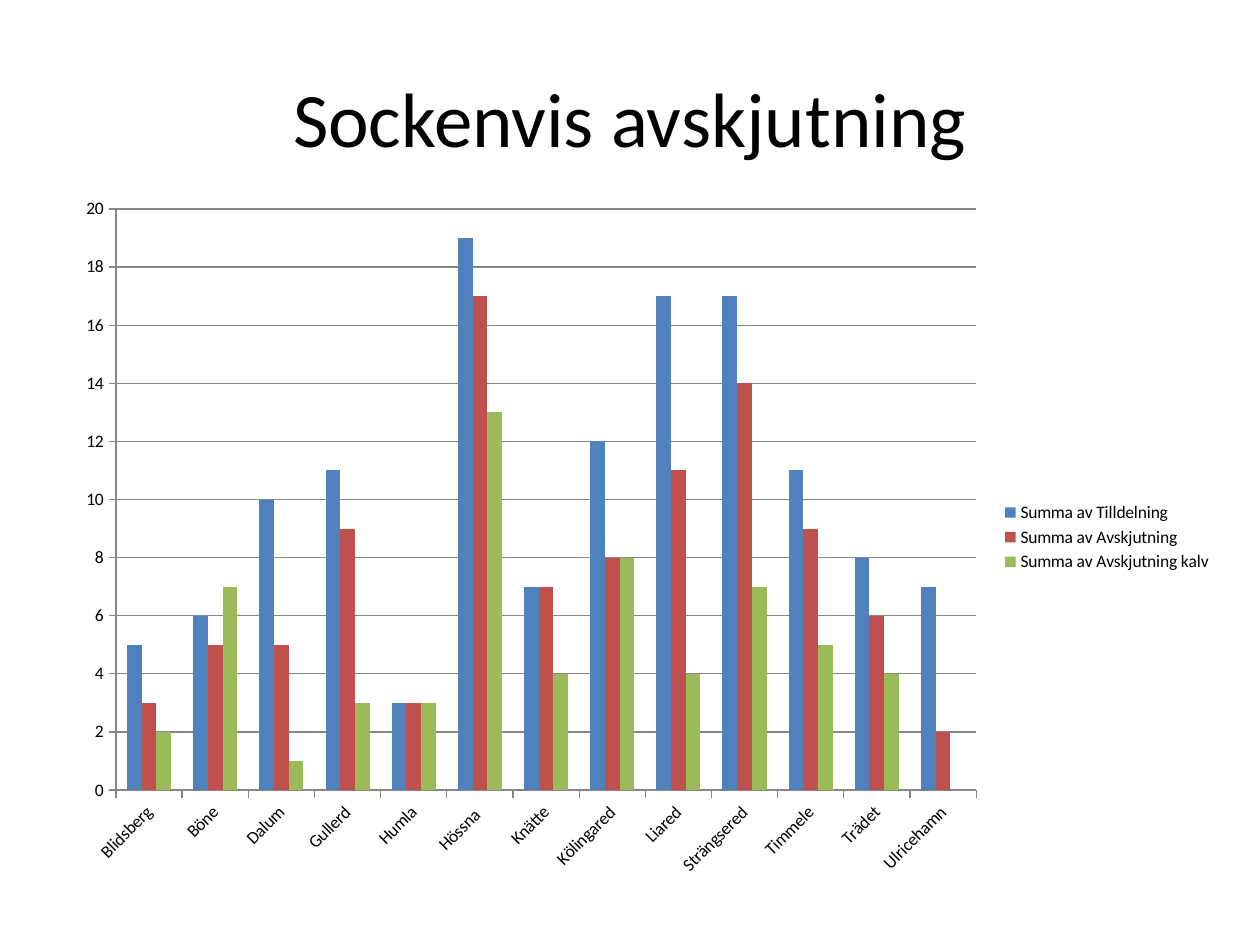
from typing import NamedTuple

from pptx import Presentation
from pptx import util as u
from pptx.chart.data import CategoryChartData
from pptx.dml.color import RGBColor
from pptx.enum import chart as ch
from pptx.enum import text

FONT = "Calibri"
COLORS = {
    "text": "000000",
    "axis": "868686",
    "allotted": "4F81BD",
    "shot": "C0504D",
    "calves": "9BBB59",
}


class Tally(NamedTuple):
    name: str
    color: str
    values: tuple[int, ...]


PARISHES = ("Blidsberg", "Böne", "Dalum", "Gullerd", "Humla", "Hössna ", "Knätte",
            "Kölingared", "Liared", "Strängsered", "Timmele", "Trädet", "Ulricehamn")
TALLIES = (
    Tally("Summa av Tilldelning", "allotted", (5, 6, 10, 11, 3, 19, 7, 12, 17, 17, 11, 8, 7)),
    Tally("Summa av Avskjutning", "shot", (3, 5, 5, 9, 3, 17, 7, 8, 11, 14, 9, 6, 2)),
    Tally("Summa av Avskjutning kalv", "calves", (2, 7, 1, 3, 3, 13, 4, 8, 4, 7, 5, 4, 0)),
)


def rgb(key: str) -> RGBColor:
    return RGBColor.from_string(COLORS[key])


def style_font(font, size: int) -> None:
    font.name = FONT
    font.size = u.Pt(size)
    font.color.rgb = rgb("text")


def style_line(line) -> None:
    line.color.rgb = rgb("axis")
    line.width = u.Pt(0.75)


def add_heading(slide, wording: str) -> None:
    heading = slide.shapes.add_textbox(u.Cm(1.27), u.Cm(0.76), u.Cm(22.86), u.Cm(3.18))
    frame = heading.text_frame
    frame.word_wrap = True
    frame.vertical_anchor = text.MSO_ANCHOR.MIDDLE
    paragraph = frame.paragraphs[0]
    paragraph.text = wording
    paragraph.alignment = text.PP_ALIGN.CENTER
    style_font(paragraph.font, 44)


def add_parish_chart(slide, tallies: tuple[Tally, ...]) -> None:
    data = CategoryChartData(number_format="General")
    data.categories = PARISHES
    for tally in tallies:
        data.add_series(tally.name, tally.values)
    chart = slide.shapes.add_chart(
        ch.XL_CHART_TYPE.COLUMN_CLUSTERED,
        u.Cm(1.27), u.Cm(3.73), u.Cm(23.42), u.Cm(14.2), data).chart
    style_font(chart.font, 10)
    chart.has_title = False

    # Columns
    plot = chart.plots[0]
    plot.gap_width = 150
    plot.overlap = 0
    plot.vary_by_categories = False
    for columns, tally in zip(plot.series, tallies):
        columns.format.fill.solid()
        columns.format.fill.fore_color.rgb = rgb(tally.color)

    # Axes, with slanted parish names
    parishes, animals = chart.category_axis, chart.value_axis
    for axis in (parishes, animals):
        axis.major_tick_mark = ch.XL_TICK_MARK.OUTSIDE
        axis.minor_tick_mark = ch.XL_TICK_MARK.NONE
        style_line(axis.format.line)
        style_font(axis.tick_labels.font, 10)
    parishes._element.txPr.bodyPr.set("rot", "-2700000")
    animals.minimum_scale, animals.maximum_scale, animals.major_unit = 0, 20, 2
    animals.has_major_gridlines = True
    style_line(animals.major_gridlines.format.line)

    # Legend
    chart.has_legend = True
    chart.legend.position = ch.XL_LEGEND_POSITION.RIGHT
    chart.legend.include_in_layout = False
    style_font(chart.legend.font, 10)


def main() -> None:
    deck = Presentation()
    deck.slide_width, deck.slide_height = u.Cm(25.4), u.Cm(19.05)
    slide = deck.slides.add_slide(deck.slide_layouts[6])
    add_heading(slide, "Sockenvis avskjutning")
    add_parish_chart(slide, TALLIES)
    deck.save("out.pptx")


if __name__ == "__main__":
    main()
